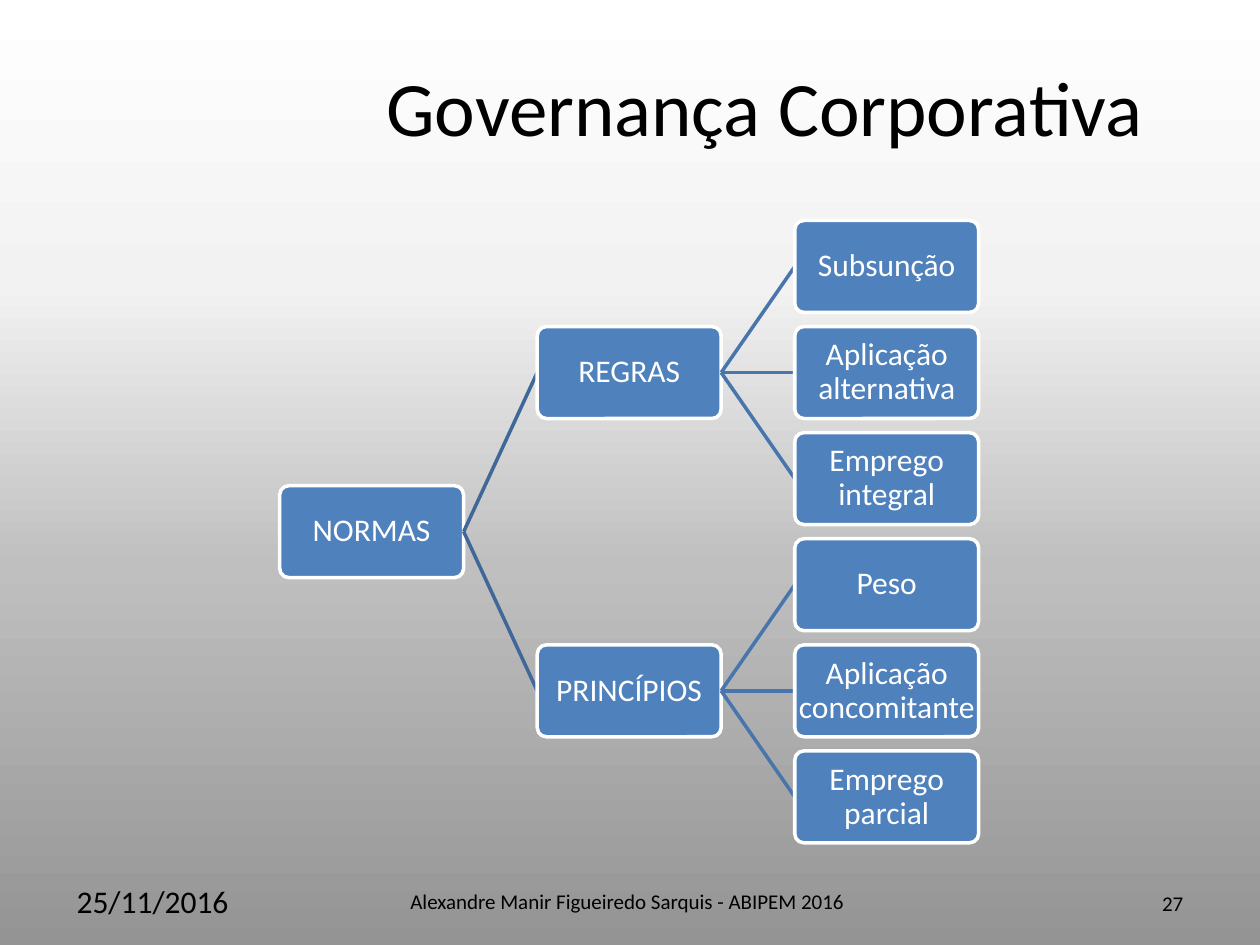
"""Build the slide on corporate governance: a tree of norms, rules and principles."""
from lxml.etree import SubElement
from pptx import Presentation
from pptx.dml.color import RGBColor
from pptx.enum.shapes import MSO_CONNECTOR, MSO_SHAPE
from pptx.enum.text import MSO_ANCHOR as Anchor, PP_ALIGN as Align
from pptx.oxml.ns import qn
from pptx.util import Inches, Pt

BLACK = RGBColor(0x00, 0x00, 0x00)
WHITE = RGBColor(0xFF, 0xFF, 0xFF)
BLUE = RGBColor(0x4F, 0x81, 0xBD)
BRANCH = RGBColor(0x3F, 0x67, 0x97)
TWIG = RGBColor(0x48, 0x75, 0xAC)
SHADES = [(0, "949494"), (40, "BFBFBF"), (70, "F2F2F2"), (100, "FFFFFF")]

LEFT, TOP = 2.22, 1.75
BOX_WIDTH, BOX_HEIGHT = 1.46, 0.73
COLUMN = BOX_WIDTH * 1.4
ROW = (5.96 - TOP) / 5

NODES = [
    ("NORMAS", None, 0, 2.5),
    ("REGRAS", "NORMAS", 1, 1),
    ("Subsunção", "REGRAS", 2, 0),
    ("Aplicação alternativa", "REGRAS", 2, 1),
    ("Emprego integral", "REGRAS", 2, 2),
    ("PRINCÍPIOS", "NORMAS", 1, 4),
    ("Peso", "PRINCÍPIOS", 2, 3),
    ("Aplicação concomitante", "PRINCÍPIOS", 2, 4),
    ("Emprego parcial", "PRINCÍPIOS", 2, 5),
]
LABELS = [
    ("Governança Corporativa", 2.64, 0.21, 6.86, 1.25, 44, Align.CENTER, Anchor.MIDDLE),
    ("25/11/2016", 0.51, 6.95, 2.33, 0.4, 18, Align.LEFT, Anchor.TOP),
    ("Alexandre Manir Figueiredo Sarquis - ABIPEM 2016", 2.8, 6.95, 4.36, 0.4, 12,
     Align.CENTER, Anchor.MIDDLE),
    ("27", 7.16, 6.97, 2.33, 0.4, 12, Align.RIGHT, Anchor.MIDDLE),
]


def write(shape, text, size, color, align, anchor):
    frame = shape.text_frame
    frame.word_wrap = True
    frame.vertical_anchor = anchor
    para = frame.paragraphs[0]
    para.alignment = align
    span = para.add_run()
    span.text = text
    span.font.name = "Calibri"
    span.font.size = Pt(size)
    span.font.color.rgb = color
    return frame


deck = Presentation()
deck.slide_width, deck.slide_height = Inches(10), Inches(7.5)
page = deck.slides.add_slide(deck.slide_layouts[6])

backdrop = page.background.fill
backdrop.gradient()
backdrop.gradient_angle = 90
stops = page.element.find(".//" + qn("a:gsLst"))
stops.clear()
for position, shade in SHADES:
    stop = SubElement(stops, qn("a:gs"), pos=str(position * 1000))
    SubElement(stop, qn("a:srgbClr"), val=shade)

for text, left, top, width, height, size, align, anchor in LABELS:
    label = page.shapes.add_textbox(Inches(left), Inches(top), Inches(width), Inches(height))
    write(label, text, size, BLACK, align, anchor)

boxes = {}
for text, parent, column, row in NODES:
    box = page.shapes.add_shape(
        MSO_SHAPE.ROUNDED_RECTANGLE,
        Inches(LEFT + column * COLUMN), Inches(TOP + row * ROW),
        Inches(BOX_WIDTH), Inches(BOX_HEIGHT))
    box.adjustments[0] = 0.1
    box.shadow.inherit = False
    box.fill.solid()
    box.fill.fore_color.rgb = BLUE
    box.line.color.rgb = WHITE
    box.line.width = Pt(2)
    frame = write(box, text, 18, WHITE, Align.CENTER, Anchor.MIDDLE)
    frame.margin_left = frame.margin_right = frame.margin_top = frame.margin_bottom = 0
    frame.paragraphs[0].line_spacing = 0.9
    boxes[text] = box
    if parent:
        link = page.shapes.add_connector(MSO_CONNECTOR.STRAIGHT, 0, 0, 0, 0)
        link.begin_connect(boxes[parent], 3)
        link.end_connect(box, 1)
        link.line.color.rgb = BRANCH if column == 1 else TWIG
        link.line.width = Pt(2)
        SubElement(link.element.spPr, qn("a:effectLst"))
        box.element.addprevious(link.element)

deck.save("out.pptx")
